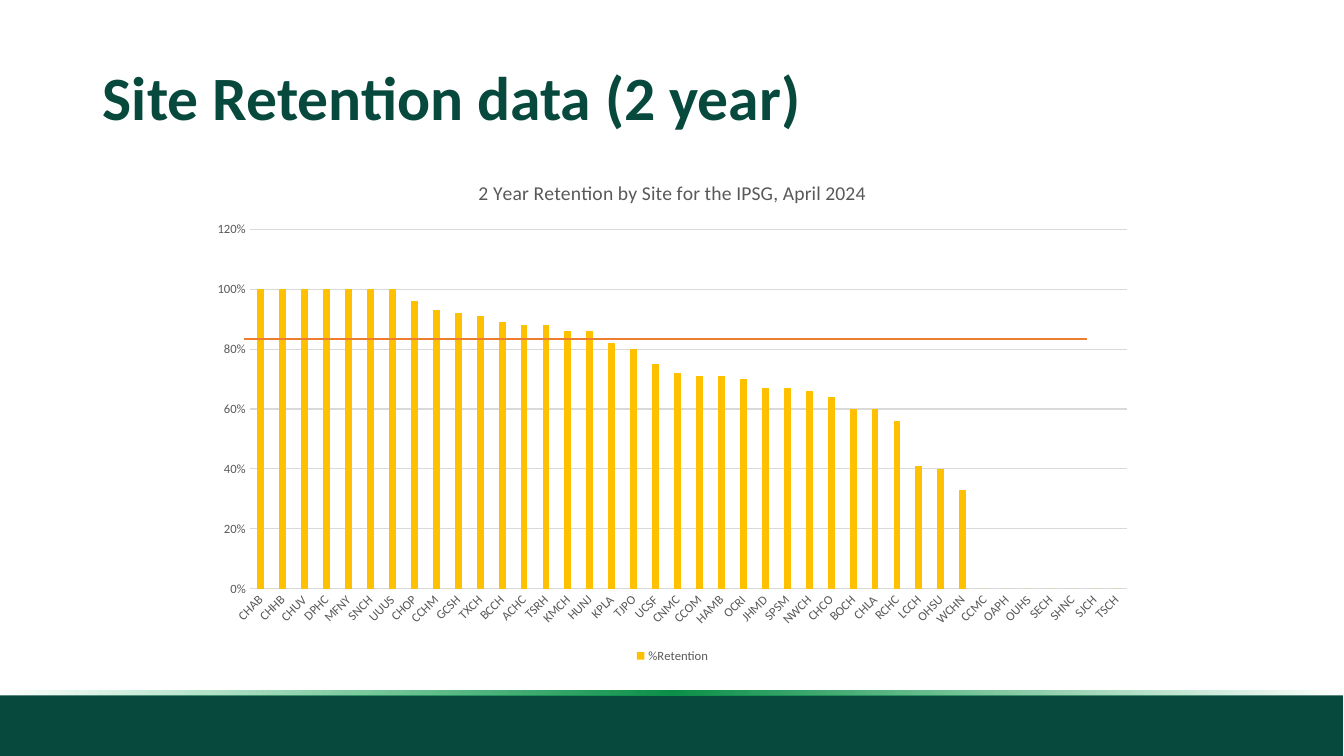
from typing import NamedTuple

from lxml.etree import SubElement
from pptx import Presentation
from pptx.chart.data import CategoryChartData
from pptx.dml.color import RGBColor
from pptx.enum.chart import XL_CHART_TYPE, XL_LEGEND_POSITION, XL_TICK_MARK
from pptx.enum.shapes import MSO_CONNECTOR, MSO_SHAPE
from pptx.enum.text import MSO_ANCHOR, MSO_AUTO_SIZE, PP_ALIGN
from pptx.oxml.ns import qn
from pptx.slide import Slide
from pptx.text.text import Font
from pptx.util import Inches, Pt

GREEN = RGBColor(0x07, 0x49, 0x3C)
GOLD = RGBColor(0xFF, 0xC0, 0x00)
ORANGE = RGBColor(0xED, 0x7D, 0x31)
GREY = RGBColor(0x59, 0x59, 0x59)
PALE = RGBColor(0xD9, 0xD9, 0xD9)
FACE = "Calibri"


class Stop(NamedTuple):
    place: int
    color: RGBColor
    alpha: int


class Band(NamedTuple):
    left: float
    top: float
    width: float
    height: float
    stops: tuple[Stop, ...] = ()


BANDS = (
    Band(0, 6.9, 13.32, 0.6),
    Band(0, 6.85, 13.33, 0.05, (
        Stop(0, RGBColor(0x0D, 0x9D, 0x4F), 0),
        Stop(50, RGBColor(0x0C, 0x90, 0x49), 100),
        Stop(100, RGBColor(0x0F, 0xAB, 0x56), 0),
    )),
)

SITES = (
    "CHAB CHHB CHUV DPHC MFNY SNCH UUUS CHOP CCHM GCSH "
    "TXCH BCCH ACHC TSRH KMCH HUNJ KPLA TJPO UCSF CNMC "
    "CCOM HAMB OCRI JHMD SPSM NWCH CHCO BOCH CHLA RCHC "
    "LCCH OHSU WCHN CCMC OAPH OUHS SECH SHNC SJCH TSCH"
).split()
RATES = [1] * 7 + [
    0.96, 0.93, 0.92, 0.91, 0.89, 0.88, 0.88, 0.86, 0.86, 0.82, 0.8, 0.75,
    0.72, 0.71, 0.71, 0.7, 0.67, 0.67, 0.66, 0.64, 0.6, 0.6, 0.56, 0.41,
    0.4, 0.33,
] + [0] * 7


def set_font(font: Font, size: float, color: RGBColor, bold: bool = False) -> None:
    font.name = FACE
    font.size = Pt(size)
    font.bold = bold
    font.color.rgb = color


def add_band(slide: Slide, band: Band) -> None:
    shape = slide.shapes.add_shape(
        MSO_SHAPE.RECTANGLE, Inches(band.left), Inches(band.top),
        Inches(band.width), Inches(band.height))
    shape.shadow.inherit = False
    shape.line.fill.background()
    if not band.stops:
        shape.fill.solid()
        shape.fill.fore_color.rgb = GREEN
        return
    shape.fill.gradient()
    shape.fill.gradient_angle = 180
    stops = shape._element.spPr.find(".//" + qn("a:gsLst"))
    for old in list(stops):
        stops.remove(old)
    for stop in band.stops:
        node = SubElement(stops, qn("a:gs"), pos=str(stop.place * 1000))
        color = SubElement(node, qn("a:srgbClr"), val=str(stop.color))
        SubElement(color, qn("a:alpha"), val=str(stop.alpha * 1000))


def add_title(slide: Slide) -> None:
    title = slide.shapes.title
    title.left, title.top = Inches(0.92), Inches(0.4)
    title.width, title.height = Inches(11.5), Inches(1.19)
    frame = title.text_frame
    frame.text = "Site Retention data (2 year)"
    frame.auto_size = MSO_AUTO_SIZE.NONE
    frame.vertical_anchor = MSO_ANCHOR.MIDDLE
    para = frame.paragraphs[0]
    para.alignment = PP_ALIGN.LEFT
    para.line_spacing = 0.9
    set_font(para.font, 44, GREEN, True)


def add_rates(slide: Slide) -> None:
    data = CategoryChartData(number_format="0%")
    data.categories = SITES
    data.add_series("%Retention", RATES)
    chart = slide.shapes.add_chart(
        XL_CHART_TYPE.COLUMN_CLUSTERED, Inches(1.97), Inches(1.59),
        Inches(9.4), Inches(5.03), data).chart
    set_font(chart.font, 10, GREY)

    # Heading and legend
    chart.has_title = True
    frame = chart.chart_title.text_frame
    frame.text = "2 Year Retention by Site for the IPSG, April 2024"
    set_font(frame.paragraphs[0].font, 14, GREY)
    chart.chart_title.include_in_layout = False
    chart.has_legend = True
    chart.legend.position = XL_LEGEND_POSITION.BOTTOM
    chart.legend.include_in_layout = False
    set_font(chart.legend.font, 9, GREY)

    # Columns
    plot = chart.plots[0]
    plot.gap_width, plot.overlap = 219, -27
    plot.vary_by_categories = False
    fill = plot.series[0].format.fill
    fill.solid()
    fill.fore_color.rgb = GOLD

    # Axes
    sites, rates = chart.category_axis, chart.value_axis
    for axis in (sites, rates):
        axis.major_tick_mark = axis.minor_tick_mark = XL_TICK_MARK.NONE
        set_font(axis.tick_labels.font, 9, GREY)
    rates.has_major_gridlines = True
    for line in (sites.format.line, rates.major_gridlines.format.line):
        line.color.rgb = PALE
        line.width = Pt(0.75)
    rates.format.line.fill.background()
    rates.minimum_scale, rates.maximum_scale = 0, 1.2
    rates.major_unit = 0.2
    rates.tick_labels.number_format = "0%"
    rates.tick_labels.number_format_is_linked = False
    body = sites._element.find(qn("c:txPr")).find(qn("a:bodyPr"))
    body.set("rot", "-2700000")
    body.set("vert", "horz")


def add_mark(slide: Slide) -> None:
    mark = slide.shapes.add_connector(
        MSO_CONNECTOR.STRAIGHT, Inches(2.42), Inches(3.36),
        Inches(10.78), Inches(3.36))
    mark.line.color.rgb = ORANGE
    mark.line.width = Pt(1.5)
    SubElement(mark._element.spPr, qn("a:effectLst"))


def main() -> None:
    deck = Presentation()
    deck.slide_width, deck.slide_height = Inches(13.33), Inches(7.5)
    slide = deck.slides.add_slide(deck.slide_layouts[5])
    for band in BANDS:
        add_band(slide, band)
    add_title(slide)
    add_rates(slide)
    add_mark(slide)
    deck.save("out.pptx")


if __name__ == "__main__":
    main()
